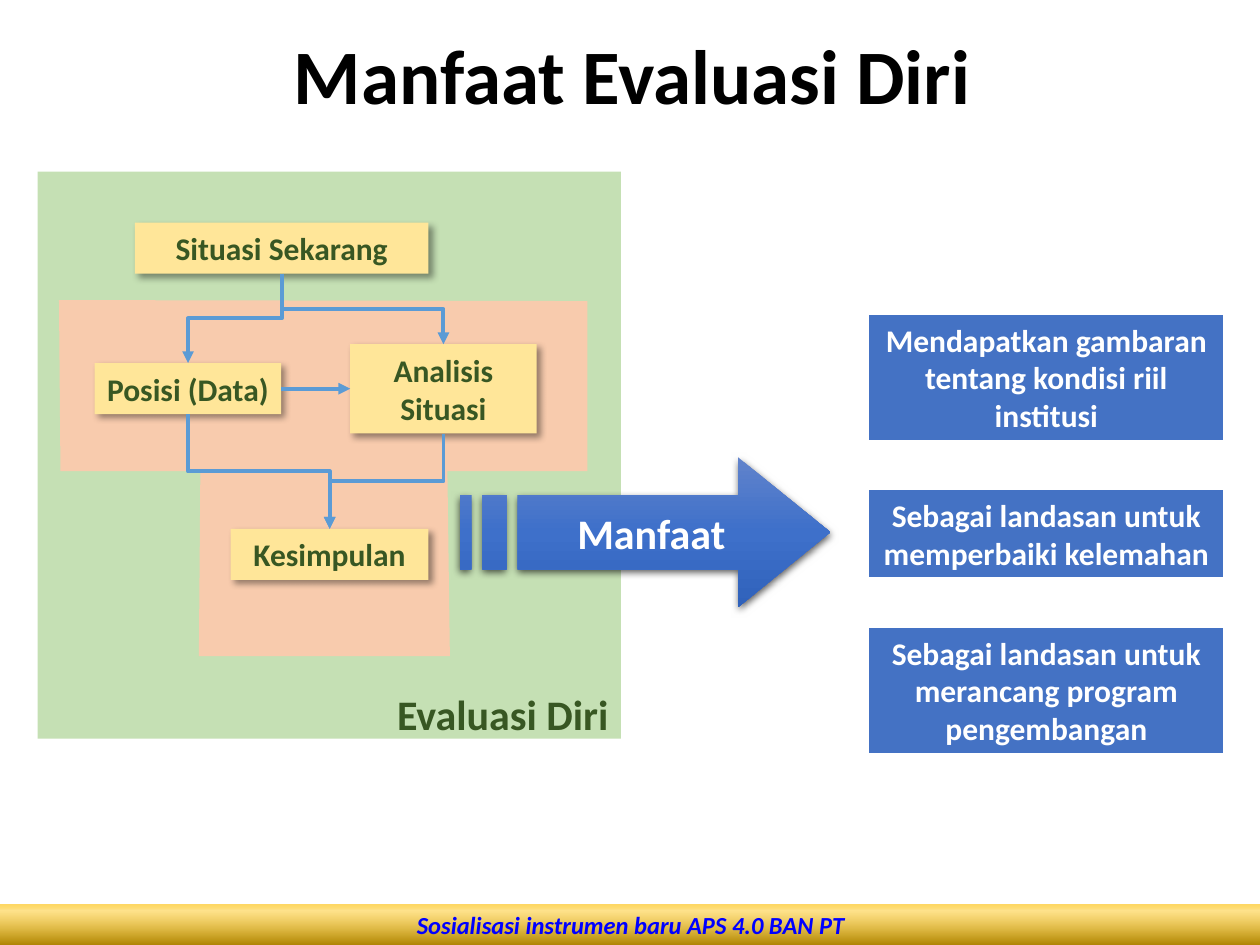
from dataclasses import dataclass

from lxml import etree
from pptx import Presentation
from pptx.dml.color import RGBColor
from pptx.enum.shapes import MSO_CONNECTOR, MSO_SHAPE
from pptx.enum.text import MSO_ANCHOR, PP_ALIGN
from pptx.oxml.ns import qn
from pptx.util import Cm, Pt

RECT = MSO_SHAPE.RECTANGLE
ELBOW, STRAIGHT = MSO_CONNECTOR.ELBOW, MSO_CONNECTOR.STRAIGHT
CENTER, RIGHT = PP_ALIGN.CENTER, PP_ALIGN.RIGHT
MIDDLE, BOTTOM = MSO_ANCHOR.MIDDLE, MSO_ANCHOR.BOTTOM
FONT = "Calibri"

COLORS = {
    "black": "000000", "white": "FFFFFF", "panel": "C5E0B4", "area": "F8CBAD",
    "step": "FFE699", "dark green": "385723", "benefit": "4472C4",
    "link": "5B9BD5", "footer text": "0000FF",
}
# Gradient stops: position %, colour, opacity %
FOOTER_STOPS = [(0, "AB8100", 100), (83, "FFC208", 46), (100, "FFD966", 100)]
ARROW_STOPS = [(0, "6183CB", 100), (50, "3E70CA", 100), (100, "3062BB", 100)]


@dataclass
class Box:
    """A rectangle in centimetres with its text."""
    text: str
    x: float
    y: float
    w: float
    h: float

    @property
    def cx(self) -> float:
        return self.x + self.w / 2

    @property
    def cy(self) -> float:
        return self.y + self.h / 2

    @property
    def bottom(self) -> float:
        return self.y + self.h


def rgb(name: str) -> RGBColor:
    return RGBColor.from_string(COLORS[name])


def add_color(parent, value: str, opacity: int) -> None:
    clr = etree.SubElement(parent, qn("a:srgbClr"), val=value)
    if opacity < 100:
        etree.SubElement(clr, qn("a:alpha"), val=str(opacity * 1000))


def set_gradient(s, stops: list, angle: int) -> None:
    s.fill.solid()
    solid = s._element.spPr.find(qn("a:solidFill"))
    grad = etree.Element(qn("a:gradFill"), rotWithShape="1")
    gs_list = etree.SubElement(grad, qn("a:gsLst"))
    for pos, value, opacity in stops:
        gs = etree.SubElement(gs_list, qn("a:gs"), pos=str(pos * 1000))
        add_color(gs, value, opacity)
    etree.SubElement(grad, qn("a:lin"), ang=str(angle * 60000), scaled="0")
    solid.getparent().replace(solid, grad)


def set_shadow(s, opacity: int, blur: float, dist: float, angle: int) -> None:
    effects = s._element.spPr.find(qn("a:effectLst"))
    shadow = etree.SubElement(
        effects, qn("a:outerShdw"), blurRad=str(Pt(blur)), dist=str(Pt(dist)),
        dir=str(angle * 60000), algn="ctr", rotWithShape="0")
    add_color(shadow, COLORS["black"], opacity)


def set_text(s, text: str, size: int, color: str, align=CENTER,
             anchor=MIDDLE, wrap: bool = True, italic: bool = False) -> None:
    tf = s.text_frame
    tf.word_wrap, tf.vertical_anchor = wrap, anchor
    p = tf.paragraphs[0]
    p.text, p.alignment = text, align
    p.font.name, p.font.size = FONT, Pt(size)
    p.font.bold, p.font.italic = True, italic
    p.font.color.rgb = rgb(color)


def add_box(shapes, box: Box, fill: str):
    s = shapes.add_shape(RECT, Cm(box.x), Cm(box.y), Cm(box.w), Cm(box.h))
    s.shadow.inherit = False
    s.fill.solid()
    s.fill.fore_color.rgb = rgb(fill)
    s.line.fill.background()
    return s


def set_outline(s, width: float) -> None:
    s.line.color.rgb, s.line.width = rgb("white"), Pt(width)


def add_outline_shape(shapes, contours: list):
    """Draw one freeform from closed contours."""
    contours = [[(Cm(x), Cm(y)) for x, y in c] for c in contours]
    builder = shapes.build_freeform(*contours[0][0], scale=1.0)
    for i, contour in enumerate(contours):
        if i:
            builder.move_to(*contour[0])
        builder.add_line_segments(contour[1:], close=True)
    s = builder.convert_to_shape()
    s.shadow.inherit = False
    s.line.fill.background()
    return s


def add_link(shapes, kind, x1: float, y1: float, x2: float, y2: float):
    c = shapes.add_connector(kind, Cm(x1), Cm(y1), Cm(x2), Cm(y2))
    c.line.color.rgb, c.line.width = rgb("link"), Pt(2.25)
    etree.SubElement(c.line._get_or_add_ln(), qn("a:tailEnd"), type="triangle")
    etree.SubElement(c._element.spPr, qn("a:effectLst"))
    return c


def link_down(shapes, upper: Box, lower: Box) -> None:
    """Elbow from the bottom of one box to the top of another."""
    half_w = (lower.y - upper.bottom) / 2
    half_h = abs(lower.cx - upper.cx) / 2
    mid_x, mid_y = (upper.cx + lower.cx) / 2, (upper.bottom + lower.y) / 2
    goes_right = lower.cx > upper.cx
    side = -1 if goes_right else 1
    # An elbow leaves sideways, so it is turned to leave downwards
    c = add_link(shapes, ELBOW, mid_x - side * half_w, mid_y - half_h,
                 mid_x + side * half_w, mid_y + half_h)
    c._element.spPr.xfrm.set("rot", str((270 if goes_right else 90) * 60000))


def main() -> None:
    prs = Presentation()
    prs.slide_width, prs.slide_height = Cm(25.4), Cm(19.05)
    shapes = prs.slides.add_slide(prs.slide_layouts[6]).shapes

    # Footer band
    footer = Box("Sosialisasi instrumen baru APS 4.0 BAN PT", -0.03, 18.21, 25.5, 0.86)
    s = add_box(shapes, footer, "white")
    set_gradient(s, FOOTER_STOPS, 270)
    set_outline(s, 0.75)
    set_text(s, footer.text, 14, "footer text", italic=True)

    # Self-evaluation panel
    panel = Box("Evaluasi Diri", 0.76, 3.46, 11.76, 11.43)
    s = add_box(shapes, panel, "panel")
    set_text(s, panel.text, 24, "dark green", RIGHT, BOTTOM)
    s.text_frame.margin_bottom = 0

    # Title
    s = shapes.add_textbox(Cm(1.8), Cm(0.38), Cm(21.9), Cm(2.46))
    set_text(s, "Manfaat Evaluasi Diri", 44, "black")
    s.text_frame.paragraphs[0].line_spacing = 0.9

    # Benefits, stacked with equal gaps
    top = 6.32
    for text, height in [
        ("Mendapatkan gambaran tentang kondisi riil institusi", 2.57),
        ("Sebagai landasan untuk memperbaiki kelemahan", 1.8),
        ("Sebagai landasan untuk merancang program pengembangan", 2.57),
    ]:
        s = add_box(shapes, Box(text, 17.5, top, 7.19, height), "benefit")
        set_outline(s, 1.5)
        set_text(s, text, 18, "white")
        top += height + 0.97

    # Striped arrow
    y1, y2, y3, y4 = 9.22, 9.98, 11.48, 12.24
    head = [(14.88, y1), (14.88, y2), (10.44, y2), (10.44, y3),
            (14.88, y3), (14.88, y4), (16.74, (y1 + y4) / 2)]
    stripes = [[(a, y2), (a, y3), (b, y3), (b, y2)]
               for a, b in [(9.73, 10.21), (9.27, 9.5)]]
    s = add_outline_shape(shapes, [head, *stripes])
    set_gradient(s, ARROW_STOPS, 90)
    set_shadow(s, 63, 4.5, 1.5, 90)
    set_text(s, "Manfaat", 24, "white", wrap=False)
    s.text_frame.margin_left = Cm(0.5)

    # T-shaped area behind the steps
    s = add_outline_shape(shapes, [[
        (1.19, 6.05), (1.22, 9.5), (4.04, 9.5), (4.01, 13.23),
        (9.07, 13.23), (9.02, 9.5), (11.84, 9.5), (11.84, 6.07)]])
    s.fill.solid()
    s.fill.fore_color.rgb = rgb("area")

    # Steps, with narrow side margins so short labels stay on one line
    now = Box("Situasi Sekarang", 2.72, 4.49, 5.92, 1.03)
    data = Box("Posisi (Data)", 1.91, 7.32, 3.76, 1.03)
    analysis = Box("Analisis Situasi", 7.06, 6.94, 3.76, 1.8)
    conclusion = Box("Kesimpulan", 4.65, 10.66, 3.99, 1.03)
    for step in (now, data, analysis, conclusion):
        s = add_box(shapes, step, "step")
        set_shadow(s, 40, 4, 3, 45)
        set_text(s, step.text, 18, "dark green")
        s.text_frame.margin_left = s.text_frame.margin_right = Cm(0.15)

    # Links between steps
    for upper, lower in [(now, data), (now, analysis),
                         (data, conclusion), (analysis, conclusion)]:
        link_down(shapes, upper, lower)
    add_link(shapes, STRAIGHT, data.x + data.w, data.cy, analysis.x, data.cy)

    prs.save("out.pptx")


if __name__ == "__main__":
    main()
